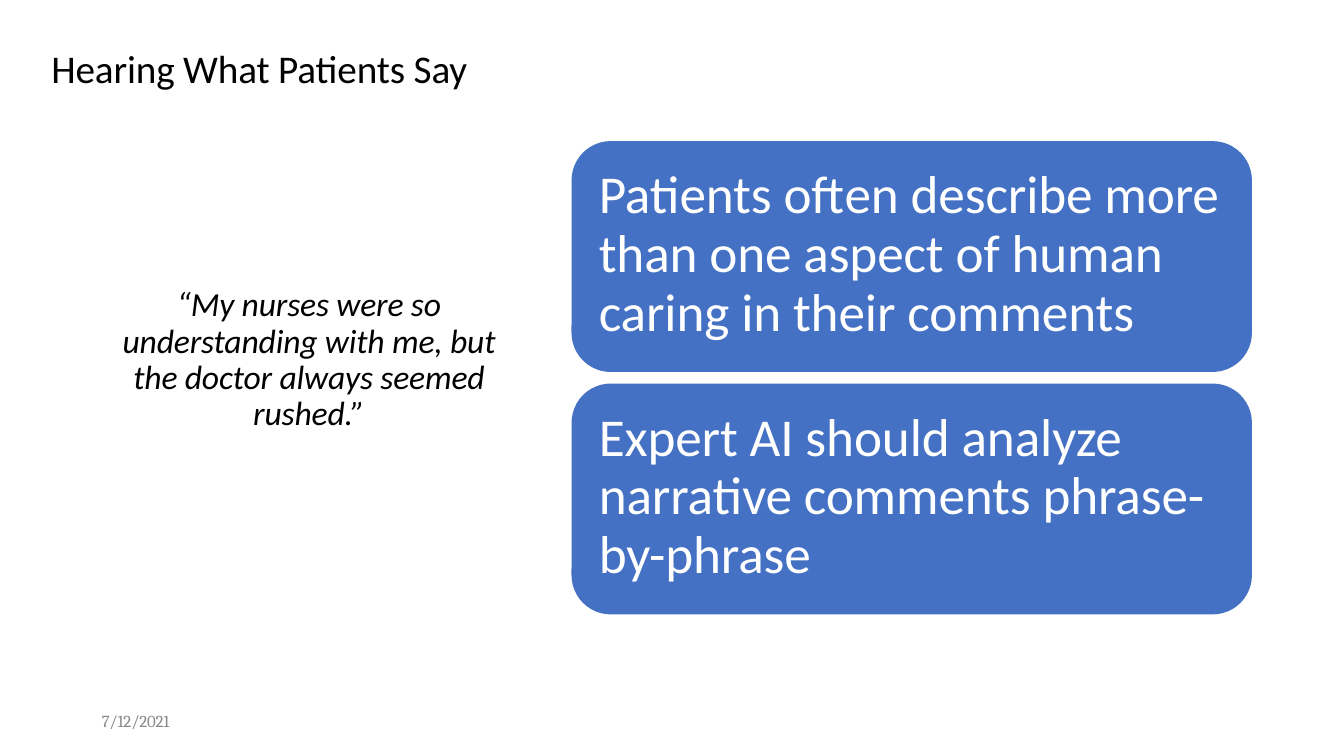
"""Builds the slide on what patients say, laid out on a grid of 160 columns by 90 rows."""
from dataclasses import dataclass

from pptx import Presentation
from pptx.dml.color import RGBColor
from pptx.enum.shapes import MSO_SHAPE
from pptx.enum.text import MSO_ANCHOR, PP_ALIGN
from pptx.util import Emu, Pt

CELL = 76200
COLS, ROWS = 160, 90
BLACK = RGBColor(0x00, 0x00, 0x00)
WHITE = RGBColor(0xFF, 0xFF, 0xFF)
BLUE = RGBColor(0x44, 0x71, 0xC4)
GREY = RGBColor(0x89, 0x88, 0x85)


@dataclass(frozen=True)
class Box:
    col: float
    row: float
    wide: float
    high: float

    def place(self) -> list[Emu]:
        return [Emu(round(n * CELL)) for n in (self.col, self.row, self.wide, self.high)]


@dataclass(frozen=True)
class Style:
    size: float
    color: RGBColor
    font: str = "Calibri"
    italic: bool = False
    align: PP_ALIGN = PP_ALIGN.LEFT
    lead: float | None = None
    before: float = 0
    track: int = -10


@dataclass(frozen=True)
class Label:
    box: Box
    style: Style
    lines: tuple[str, ...]
    top: float = 0


TITLE = Style(28, BLACK, before=0.9)
QUOTE = Style(24, BLACK, italic=True, align=PP_ALIGN.CENTER, lead=25.9, before=4.2)
POINT = Style(38, WHITE, lead=41.8, before=5.6)
DATE = Style(12, GREY, font="Cambria")

LABELS = (
    Label(Box(6.12, 5.16, 50.28, 5.88), TITLE, ("Hearing What Patients Say",), 0.12),
    Label(Box(14.16, 33.48, 45.24, 18.12), QUOTE,
          ("“My nurses were so understanding with me, but the doctor always seemed",
           "rushed.”"), 0.72),
    Label(Box(12.12, 84.6, 9.48, 2.64), DATE, ("7/12/2021",)),
)

POINTS = (
    "Patients often describe more than one aspect of human caring in their comments",
    "Expert AI should analyze narrative comments phrase-by-phrase",
)
CARD = Box(68.04, 16.8, 81, 27.48)
PITCH = 28.86
ROUND = 0.17


def write(frame, lines: tuple[str, ...], style: Style, pads: tuple[float, ...]) -> None:
    frame.word_wrap = True
    frame.vertical_anchor = MSO_ANCHOR.TOP
    (frame.margin_left, frame.margin_top,
     frame.margin_right, frame.margin_bottom) = [Emu(round(n * CELL)) for n in pads]
    for i, line in enumerate(lines):
        para = frame.paragraphs[0] if i == 0 else frame.add_paragraph()
        para.alignment = style.align
        para.space_before = Pt(0 if i else style.before)
        if style.lead:
            para.line_spacing = Pt(style.lead)
        run = para.add_run()
        run.text = line
        font = run.font
        font.name, font.size, font.italic = style.font, Pt(style.size), style.italic
        font.color.rgb = style.color
        run._r.get_or_add_rPr().set("spc", str(style.track))


def label(slide, item: Label) -> None:
    shape = slide.shapes.add_textbox(*item.box.place())
    write(shape.text_frame, item.lines, item.style, (0, item.top, 0, 0))


def card(slide, box: Box, text: str) -> None:
    shape = slide.shapes.add_shape(MSO_SHAPE.ROUNDED_RECTANGLE, *box.place())
    shape.adjustments[0] = ROUND
    shape.shadow.inherit = False
    shape.fill.solid()
    shape.fill.fore_color.rgb = BLUE
    shape.line.fill.background()
    write(shape.text_frame, (text,), POINT, (1.88, 1.6, 1.8, 0))


def main() -> None:
    deck = Presentation()
    deck.slide_width, deck.slide_height = Emu(COLS * CELL), Emu(ROWS * CELL)
    slide = deck.slides.add_slide(deck.slide_layouts[6])
    for item in LABELS:
        label(slide, item)
    for i, text in enumerate(POINTS):
        card(slide, Box(CARD.col, CARD.row + i * PITCH, CARD.wide, CARD.high), text)
    deck.save("out.pptx")


if __name__ == "__main__":
    main()
